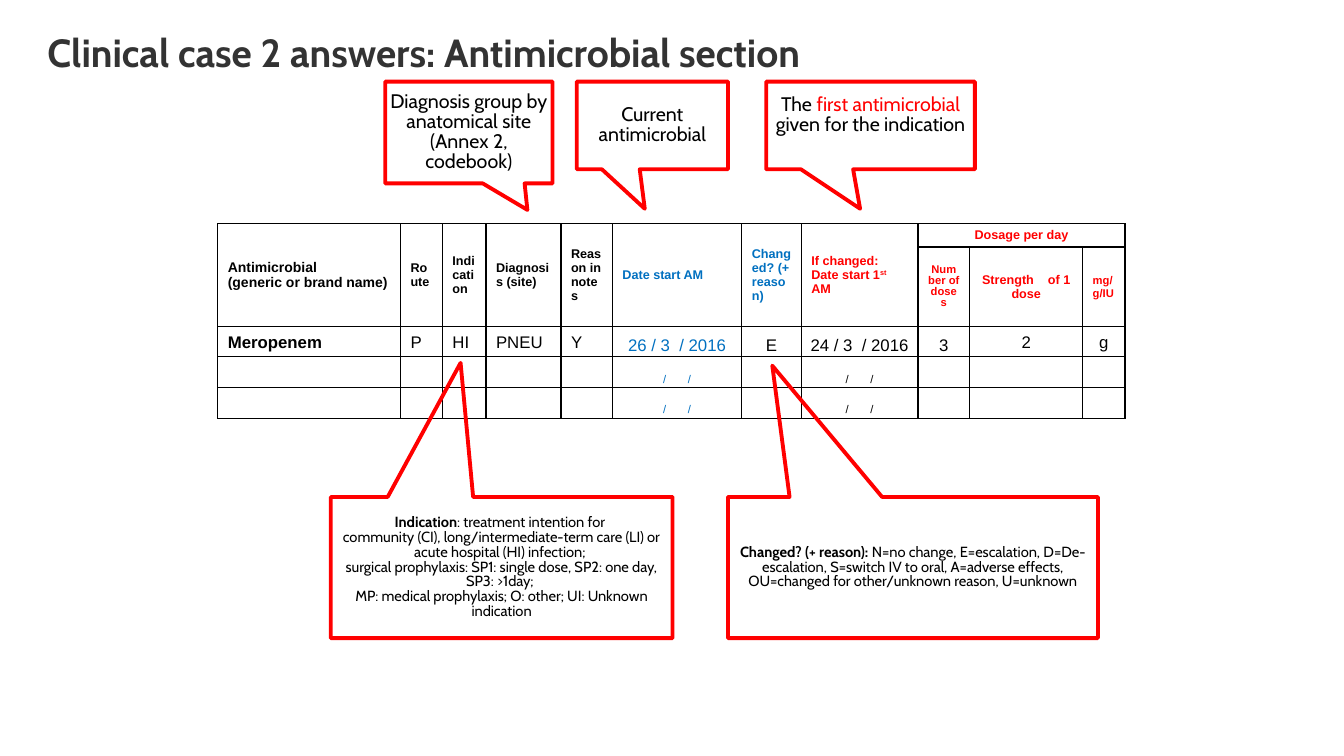
from dataclasses import dataclass
from typing import Optional

from lxml import etree
from pptx import Presentation
from pptx import util as u
from pptx.dml.color import RGBColor
from pptx.enum import shapes, text
from pptx.oxml.ns import qn

COLOURS = {"black": "000000", "red": "FF0000", "blue": "0070C0", "title": "333333"}
SLIDE_W, SLIDE_H = u.Inches(13.33), u.Inches(7.5)
LEFT, CENTRE = text.PP_ALIGN.LEFT, text.PP_ALIGN.CENTER
TOP, MIDDLE, BOTTOM = (text.MSO_ANCHOR.TOP, text.MSO_ANCHOR.MIDDLE,
                       text.MSO_ANCHOR.BOTTOM)

# Cell padding in points: sides, top and bottom
WIDE, NARROW, NONE = (7.2, 3.6), (2.9, 1.4), (0, 0)


@dataclass
class Words:
    text: str
    colour: str = "black"
    bold: bool = False
    raised: bool = False


@dataclass
class Style:
    size: float
    font: str = "Cabin"
    align: text.PP_ALIGN = CENTRE
    spacing: Optional[float] = 0.85


@dataclass
class Callout:
    box: tuple[float, float, float, float]  # left, top, width, height in % of slide
    tip: tuple[float, float]
    size: float
    paragraphs: list[list[Words]]
    bottom_pad: float = 0


@dataclass
class Entry:
    row: int
    column: int
    paragraphs: list[list[Words]]
    size: float
    align: text.PP_ALIGN = LEFT
    anchor: text.MSO_ANCHOR = MIDDLE
    pad: tuple[float, float] = WIDE
    spacing: Optional[float] = None


def across(share: float) -> int:
    return round(SLIDE_W * share / 100)


def down(share: float) -> int:
    return round(SLIDE_H * share / 100)


def place(box: tuple[float, float, float, float]) -> tuple[int, int, int, int]:
    left, top, width, height = box
    return across(left), down(top), across(width), down(height)


def write(frame, paragraphs: list[list[Words]], style: Style) -> None:
    for index, words in enumerate(paragraphs):
        paragraph = frame.add_paragraph() if index else frame.paragraphs[0]
        paragraph.alignment = style.align
        if style.spacing:
            paragraph.line_spacing = style.spacing
        for part in words:
            run = paragraph.add_run()
            run.text = part.text
            run.font.name, run.font.size = style.font, u.Pt(style.size)
            run.font.bold = part.bold
            run.font.color.rgb = RGBColor.from_string(COLOURS[part.colour])
            if part.raised:
                run._r.get_or_add_rPr().set("baseline", "30000")


def prepare(frame, anchor: text.MSO_ANCHOR, bottom: float = 0) -> None:
    frame.word_wrap, frame.vertical_anchor = True, anchor
    frame.margin_left = frame.margin_right = frame.margin_top = 0
    frame.margin_bottom = u.Pt(bottom)


def draw_callout(slide, callout: Callout) -> None:
    bubble = slide.shapes.add_shape(shapes.MSO_SHAPE.RECTANGULAR_CALLOUT,
                                    *place(callout.box))
    bubble.shadow.inherit = False
    bubble.adjustments[0], bubble.adjustments[1] = callout.tip
    bubble.fill.background()
    bubble.line.color.rgb = RGBColor.from_string(COLOURS["red"])
    bubble.line.width = u.Pt(2.75)
    prepare(bubble.text_frame, MIDDLE, callout.bottom_pad)
    write(bubble.text_frame, callout.paragraphs, Style(callout.size))


def rule_cell(cell) -> None:
    """Clear the fill, draw thin borders and keep an empty cell low."""
    properties = cell._tc.get_or_add_tcPr()
    for side in ("a:lnL", "a:lnR", "a:lnT", "a:lnB"):
        border = etree.SubElement(properties, qn(side), w=str(u.Pt(1)))
        fill = etree.SubElement(border, qn("a:solidFill"))
        etree.SubElement(fill, qn("a:srgbClr"), val=COLOURS["black"])
    cell.fill.background()
    etree.SubElement(cell.text_frame.paragraphs[0]._p, qn("a:endParaRPr"), sz="800")


def draw_table(slide, entries: list[Entry]) -> None:
    frame = slide.shapes.add_table(len(ROWS), len(COLUMNS), across(16.2), down(29.6),
                                   across(sum(COLUMNS)), down(sum(ROWS)))
    table = frame.table
    table.first_row = table.horz_banding = False
    for column, share in zip(table.columns, COLUMNS):
        column.width = across(share)
    for row, share in zip(table.rows, ROWS):
        row.height = down(share)
    for cell in table.iter_cells():
        rule_cell(cell)
    for column in range(DOSAGE):
        table.cell(0, column).merge(table.cell(1, column))
    table.cell(0, DOSAGE).merge(table.cell(0, len(COLUMNS) - 1))
    for entry in entries:
        cell = table.cell(entry.row, entry.column)
        cell.vertical_anchor = entry.anchor
        cell.margin_left = cell.margin_right = u.Pt(entry.pad[0])
        cell.margin_top = cell.margin_bottom = u.Pt(entry.pad[1])
        write(cell.text_frame, entry.paragraphs,
              Style(entry.size, "Arial", entry.align, entry.spacing))


# Table grid, in % of the slide
COLUMNS = [13.6, 3.12, 3.24, 5.58, 3.83, 9.63, 4.43, 8.68, 3.86, 8.4, 3.15]
ROWS = [3.07, 10.53, 3.87, 4.07, 4.07]
DOSAGE = 8
START, CHANGED, FIRST_START = 5, 6, 7

# Table heading
HEADING = [("Route", "black"), ("Indication", "black"), ("Diagnosis (site)", "black"),
           ("Reason in notes", "black"), ("Date start AM", "blue"),
           ("Changed? (+ reason)", "blue")]
entries = [
    Entry(0, 0, [[Words("Antimicrobial", bold=True)],
                 [Words("(generic or brand name)", bold=True)]], 10),
    *(Entry(0, column, [[Words(label, colour, True)]], 9)
      for column, (label, colour) in enumerate(HEADING, 1)),
    Entry(0, FIRST_START, [[Words("If changed: Date start 1", "red", True),
                            Words("st", "red", True, True),
                            Words(" AM", "red", True)]], 9),
    Entry(0, DOSAGE, [[Words("Dosage per day", "red", True)]], 9, CENTRE, pad=NONE),
    Entry(1, DOSAGE, [[Words("Number of doses", "red", True)]], 8, CENTRE,
          spacing=u.Pt(8)),
    Entry(1, DOSAGE + 1, [[Words("Strength    of 1 dose", "red", True)]], 9, CENTRE,
          pad=NONE),
    Entry(1, DOSAGE + 2, [[Words("mg/g/IU", "red", True)]], 8),
]

# Answer row and the two open rows
ANSWER = ["Meropenem", "P", "HI", "PNEU", "Y", "26 / 3  / 2016", "E",
          "24 / 3  / 2016", "3", "2", "g"]
for column, answer in enumerate(ANSWER):
    words = Words(answer, "blue" if column == START else "black", column == 0)
    entries.append(Entry(2, column, [[words]], 12, CENTRE if column >= START else LEFT,
                         BOTTOM, NARROW if START <= column <= DOSAGE else WIDE))
entries += [Entry(row, column, [[Words("/       /", colour)]], 8, CENTRE, BOTTOM, NARROW)
            for row in (3, 4) for column, colour in ((START, "blue"),
                                                     (FIRST_START, "black"))]

# Callouts above and below the table
column_notes = [
    Callout((28.66, 10.8, 12.45, 13.47), (0.35, 0.76), 14,
            [[Words("Diagnosis group by anatomical site")],
             [Words("(Annex 2, codebook)")]]),
    Callout((42.91, 10.8, 11.25, 11.6), (-0.05, 0.95), 14,
            [[Words("Current antimicrobial")]]),
    Callout((57.01, 10.8, 15.53, 11.6), (-0.05, 0.95), 14,
            [[Words("The "), Words("first antimicrobial ", "red"),
              Words("given for the indication")]], bottom_pad=14.5),
]
code_notes = [
    Callout((24.61, 65.73, 25.43, 18.67), (-0.12, -1.45), 10.5,
            [[Words("Indication", bold=True), Words(": treatment intention for ")],
             [Words("community (CI), long/intermediate-term care (LI) or acute "
                    "hospital (HI) infection; ")],
             [Words("surgical prophylaxis: SP1: single dose, SP2: one day, SP3: >1day; ")],
             [Words("MP: medical prophylaxis; O: other; UI: Unknown indication")]]),
    Callout((54.16, 65.73, 27.53, 18.67), (-0.38, -1.43), 10.5,
            [[Words("Changed? (+ reason): ", bold=True),
              Words("N=no change, E=escalation, D=De-escalation, S=switch IV to oral, "
                    "A=adverse effects, OU=changed for other/unknown reason, "
                    "U=unknown")]]),
]


def main() -> None:
    deck = Presentation()
    deck.slide_width, deck.slide_height = SLIDE_W, SLIDE_H
    slide = deck.slides.add_slide(deck.slide_layouts[6])
    heading = slide.shapes.add_textbox(*place((3.53, 4.4, 84.62, 11.6))).text_frame
    prepare(heading, TOP)
    write(heading, [[Words("Clinical case 2 answers: Antimicrobial section",
                           "title", True)]], Style(28, align=LEFT, spacing=0.9))
    draw_table(slide, entries)
    for callout in column_notes + code_notes:
        draw_callout(slide, callout)
    deck.save("out.pptx")


if __name__ == "__main__":
    main()
